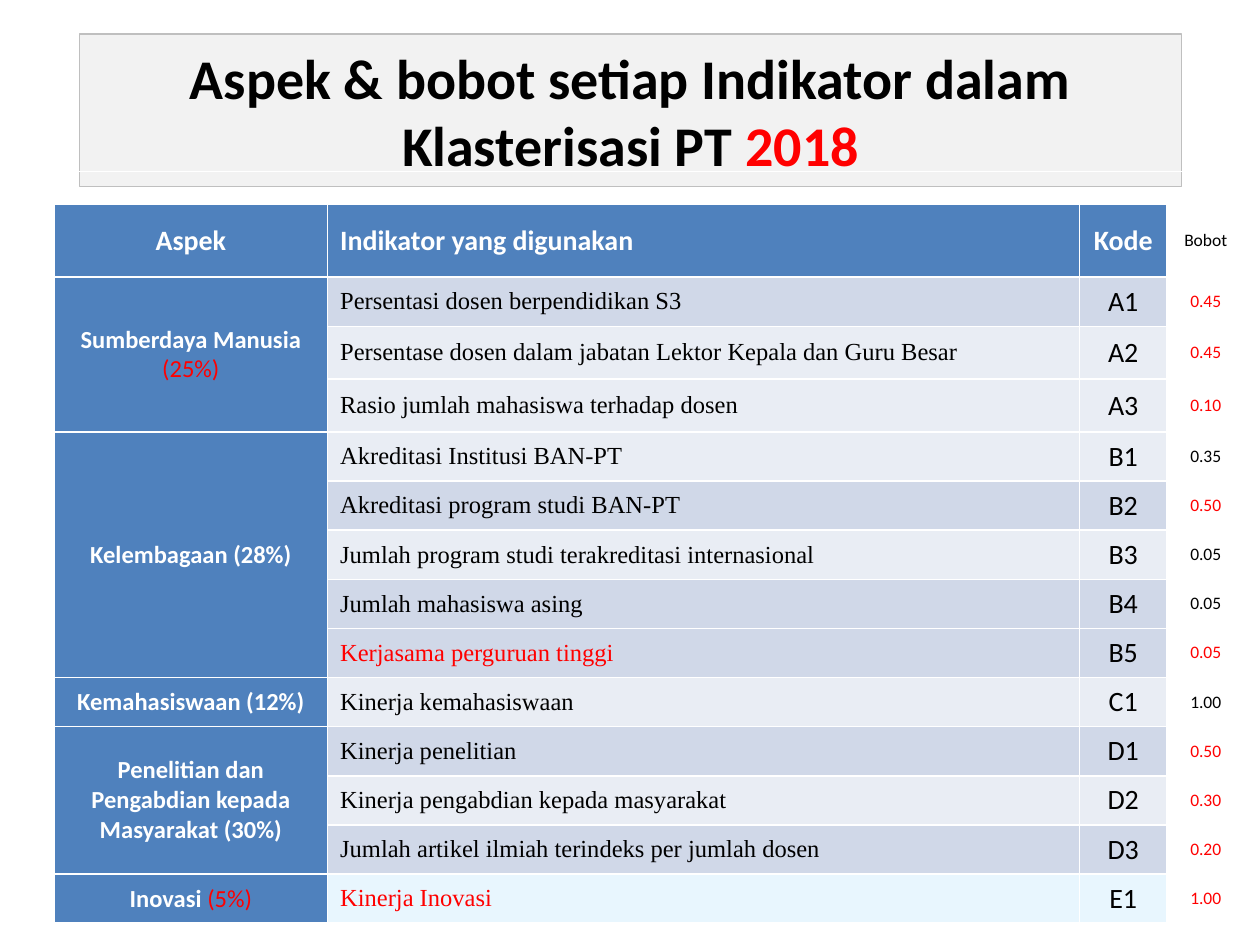
from typing import NamedTuple

from lxml.etree import SubElement
from pptx import Presentation
from pptx.dml.color import RGBColor
from pptx.enum.text import MSO_ANCHOR, PP_ALIGN
from pptx.oxml import parse_xml
from pptx.oxml.ns import nsdecls, qn
from pptx.util import Inches, Pt

BLACK = RGBColor(0x00, 0x00, 0x00)
WHITE = RGBColor(0xFF, 0xFF, 0xFF)
RED = RGBColor(0xFF, 0x00, 0x00)
BLUE = RGBColor(0x4F, 0x81, 0xBD)
DARK_BAND = RGBColor(0xD0, 0xD8, 0xE8)
LIGHT_BAND = RGBColor(0xE9, 0xED, 0xF4)
PALE_CYAN = RGBColor(0xE8, 0xF6, 0xFE)
TITLE_FILL = RGBColor(0xF2, 0xF2, 0xF2)
TITLE_LINE = RGBColor(0xBF, 0xBF, 0xBF)

COLUMN_WIDTHS = [2.17, 5.97, 0.69, 0.62]
SPACER_HEIGHT, HEADER_HEIGHT, ROW_HEIGHT = 0.26, 0.58, 0.39
TALL_ROWS = {"A2": 0.42, "A3": 0.42}
FIRST_INDICATOR_ROW = 2


class Indicator(NamedTuple):
    code: str
    label: str
    weight: str
    band: RGBColor
    weight_color: RGBColor = RED
    label_color: RGBColor = BLACK


class Aspect(NamedTuple):
    name: str
    share: str
    indicators: list[Indicator]
    share_is_new: bool = False


ASPECTS = [
    Aspect("Sumberdaya Manusia ", "(25%)", [
        Indicator("A1", "Persentasi dosen berpendidikan S3", "0.45", DARK_BAND),
        Indicator("A2", "Persentase dosen dalam jabatan Lektor Kepala dan Guru Besar",
                  "0.45", LIGHT_BAND),
        Indicator("A3", "Rasio jumlah mahasiswa terhadap dosen", "0.10", LIGHT_BAND),
    ], share_is_new=True),
    Aspect("Kelembagaan ", "(28%)", [
        Indicator("B1", "Akreditasi Institusi BAN-PT", "0.35", LIGHT_BAND, BLACK),
        Indicator("B2", "Akreditasi program studi BAN-PT", "0.50", DARK_BAND),
        Indicator("B3", "Jumlah program studi terakreditasi internasional",
                  "0.05", LIGHT_BAND, BLACK),
        Indicator("B4", "Jumlah mahasiswa asing", "0.05", DARK_BAND, BLACK),
        Indicator("B5", "Kerjasama perguruan tinggi", "0.05", DARK_BAND, label_color=RED),
    ]),
    Aspect("Kemahasiswaan ", "(12%)", [
        Indicator("C1", "Kinerja kemahasiswaan", "1.00", LIGHT_BAND, BLACK),
    ]),
    Aspect("Penelitian dan Pengabdian kepada Masyarakat ", "(30%)", [
        Indicator("D1", "Kinerja penelitian", "0.50", DARK_BAND),
        Indicator("D2", "Kinerja pengabdian kepada masyarakat", "0.30", LIGHT_BAND),
        Indicator("D3", "Jumlah artikel ilmiah terindeks per jumlah dosen",
                  "0.20", DARK_BAND),
    ]),
    Aspect("Inovasi ", "(5%)", [
        Indicator("E1", "Kinerja Inovasi", "1.00", PALE_CYAN, label_color=RED),
    ], share_is_new=True),
]


def add_text(frame, text: str, *, size: float, color: RGBColor = BLACK,
             bold: bool = False, font: str = "Calibri",
             align: PP_ALIGN = PP_ALIGN.CENTER) -> None:
    """Append a run to the first paragraph of the frame."""
    paragraph = frame.paragraphs[0]
    paragraph.alignment = align
    run = paragraph.add_run()
    run.text = text
    run.font.size = Pt(size)
    run.font.name = font
    run.font.bold = bold
    run.font.color.rgb = color


def set_borders(cell, **widths: float) -> None:
    """Draw white borders, given as L, R, T and B widths in points."""
    properties = cell._tc.get_or_add_tcPr()
    edges = [edge for edge in "LRTB" if edge in widths]
    for position, edge in enumerate(edges):
        properties.insert(position, parse_xml(
            f'<a:ln{edge} {nsdecls("a")} w="{Pt(widths[edge])}"><a:solidFill>'
            f'<a:srgbClr val="{WHITE}"/></a:solidFill></a:ln{edge}>'))


def style_cell(cell, fill: RGBColor | None, top: float = 1, bottom: float = 1) -> None:
    cell.vertical_anchor = MSO_ANCHOR.MIDDLE
    if fill is None:
        cell.fill.background()
        set_borders(cell, L=1)
    else:
        cell.fill.solid()
        cell.fill.fore_color.rgb = fill
        set_borders(cell, L=1, R=1, T=top, B=bottom)


def format_title(title) -> None:
    title.left, title.top = Inches(0.63), Inches(0.27)
    title.width, title.height = Inches(8.75), Inches(1.21)
    title.fill.solid()
    title.fill.fore_color.rgb = TITLE_FILL
    title.line.color.rgb = TITLE_LINE
    title.line.width = Pt(0.75)
    frame = title.text_frame
    frame.word_wrap = True
    frame.vertical_anchor = MSO_ANCHOR.MIDDLE
    add_text(frame, "Aspek & bobot setiap Indikator dalam Klasterisasi PT ",
             size=32, bold=True)
    add_text(frame, "2018", size=32, bold=True, color=RED)


def fill_spacer(table) -> None:
    """Merge the empty top row and keep it low."""
    spacer = table.cell(0, 0)
    spacer.merge(table.cell(0, len(COLUMN_WIDTHS) - 1))
    spacer.fill.background()
    spacer.margin_top = spacer.margin_bottom = 0
    SubElement(spacer.text_frame.paragraphs[0]._p, qn("a:endParaRPr"), sz="1000")


def fill_header(table) -> None:
    headings = ["Aspek", "Indikator yang digunakan", "Kode"]
    for column, heading in enumerate(headings):
        cell = table.cell(1, column)
        style_cell(cell, BLUE, bottom=1.5)
        add_text(cell.text_frame, heading, size=16, color=WHITE, bold=True,
                 align=PP_ALIGN.JUSTIFY if column == 1 else PP_ALIGN.CENTER)
    weight_heading = table.cell(1, 3)
    style_cell(weight_heading, None)
    add_text(weight_heading.text_frame, "Bobot", size=10)


def fill_indicator(table, row: int, indicator: Indicator, top: float) -> None:
    label, code, weight = (table.cell(row, column) for column in (1, 2, 3))
    style_cell(label, indicator.band, top)
    style_cell(code, indicator.band, top)
    style_cell(weight, None)
    add_text(label.text_frame, indicator.label, size=14, font="Times New Roman",
             color=indicator.label_color, align=PP_ALIGN.JUSTIFY)
    add_text(code.text_frame, indicator.code, size=16)
    add_text(weight.text_frame, indicator.weight, size=10, color=indicator.weight_color)


def fill_aspect(table, first_row: int, aspect: Aspect) -> int:
    """Fill the rows of one aspect and return the row after them."""
    top = 1.5 if first_row == FIRST_INDICATOR_ROW else 1
    next_row = first_row + len(aspect.indicators)
    for row in range(first_row, next_row):
        style_cell(table.cell(row, 0), BLUE, top if row == first_row else 1)
        indicator = aspect.indicators[row - first_row]
        fill_indicator(table, row, indicator, top if row == first_row else 1)
    aspect_cell = table.cell(first_row, 0)
    if len(aspect.indicators) > 1:
        aspect_cell.merge(table.cell(next_row - 1, 0))
    frame = aspect_cell.text_frame
    if aspect.share_is_new:
        add_text(frame, aspect.name, size=14, color=WHITE, bold=True)
        add_text(frame, aspect.share, size=14, color=RED)
    else:
        add_text(frame, aspect.name + aspect.share, size=14, color=WHITE, bold=True)
    return next_row


def add_weight_table(slide) -> None:
    heights = [SPACER_HEIGHT, HEADER_HEIGHT] + [
        TALL_ROWS.get(indicator.code, ROW_HEIGHT)
        for aspect in ASPECTS for indicator in aspect.indicators]
    table = slide.shapes.add_table(
        len(heights), len(COLUMN_WIDTHS), Inches(0.43), Inches(1.36),
        Inches(sum(COLUMN_WIDTHS)), Inches(sum(heights))).table
    table.first_row = table.horz_banding = False
    for column, width in zip(table.columns, COLUMN_WIDTHS):
        column.width = Inches(width)
    for row, height in zip(table.rows, heights):
        row.height = Inches(height)
    fill_spacer(table)
    fill_header(table)
    next_row = FIRST_INDICATOR_ROW
    for aspect in ASPECTS:
        next_row = fill_aspect(table, next_row, aspect)


def main() -> None:
    presentation = Presentation()
    presentation.slide_width, presentation.slide_height = Inches(10), Inches(7.5)
    slide = presentation.slides.add_slide(presentation.slide_layouts[5])
    format_title(slide.shapes.title)
    add_weight_table(slide)
    presentation.save("out.pptx")


if __name__ == "__main__":
    main()
